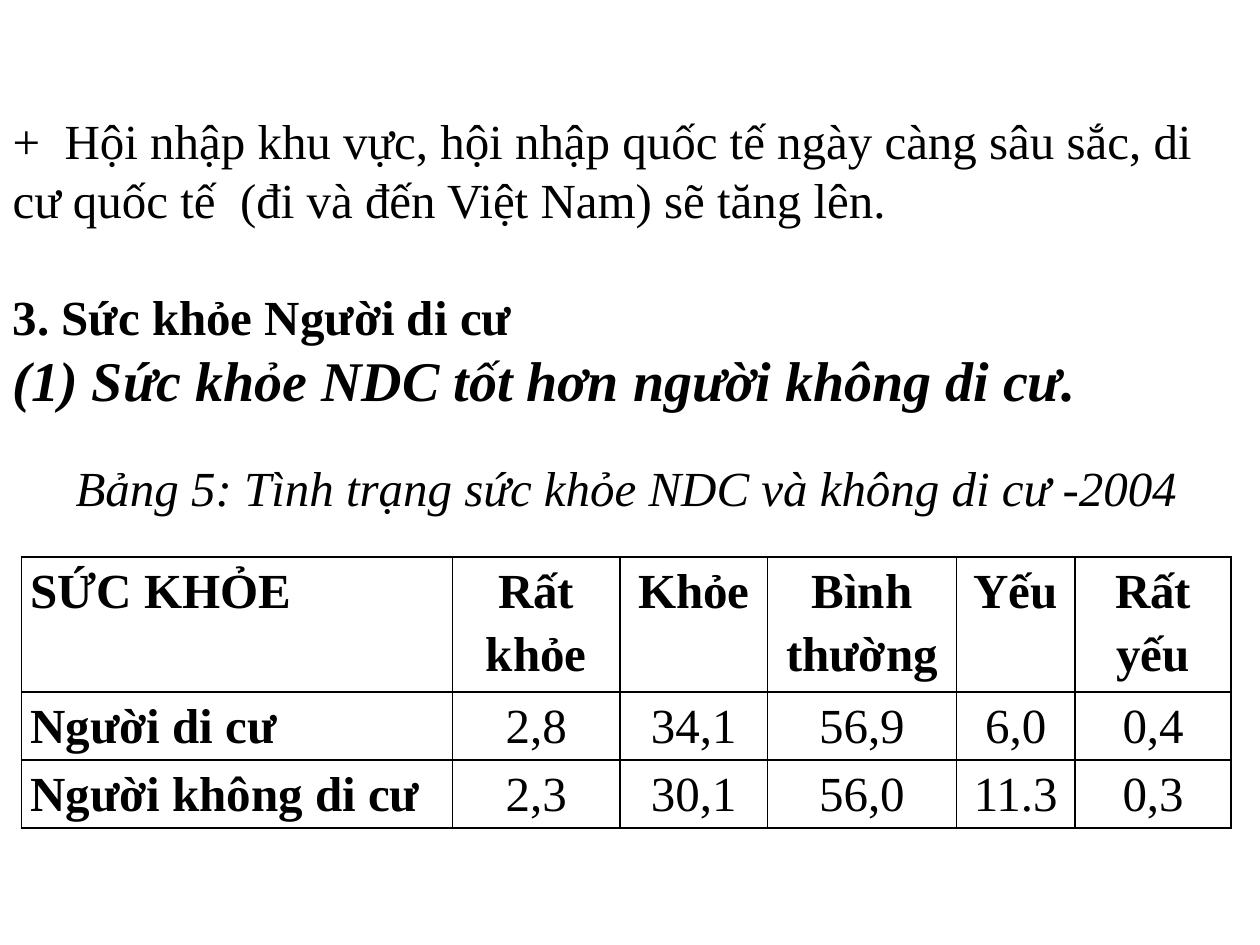
from pptx import Presentation
from pptx.dml.color import RGBColor
from pptx.enum.text import MSO_ANCHOR as Anchor, MSO_AUTO_SIZE as AutoSize, PP_ALIGN as Align
from pptx.oxml import parse_xml
from pptx.oxml.ns import nsdecls
from pptx.util import Cm, Pt

BLACK = "000000"


def color(value):
    return RGBColor.from_string(value)


def write_text(paragraph, text, size=28, bold=False, italic=False, align=Align.LEFT,
               spacing=1.0, before=0, indent=0):
    paragraph.alignment = align
    paragraph.line_spacing = spacing
    paragraph.space_before = Pt(before)
    properties = paragraph._p.get_or_add_pPr()
    properties.set("marL", "0")
    properties.set("indent", str(Cm(indent)))
    properties.append(parse_xml(f"<a:buNone {nsdecls('a')}/>"))
    run = paragraph.add_run()
    run.text = text
    font = run.font
    font.name, font.size, font.bold, font.italic = "Times New Roman", Pt(size), bold, italic
    font.color.rgb = color(BLACK)


presentation = Presentation()
presentation.slide_width, presentation.slide_height = Cm(25.4), Cm(19.05)
slide = presentation.slides.add_slide(presentation.slide_layouts[1])

caption, body = slide.shapes.title, slide.placeholders[1]
for shape, box, anchor in [
    (caption, (0, 9.09, 24.13, 1.45), Anchor.MIDDLE),
    (body, (0, 2.11, 25.4, 7.19), Anchor.TOP),
]:
    shape.left, shape.top, shape.width, shape.height = map(Cm, box)
    shape.text_frame.word_wrap = True
    shape.text_frame.auto_size = AutoSize.NONE
    shape.text_frame.vertical_anchor = anchor

write_text(caption.text_frame.paragraphs[0],
           "Bảng 5: Tình trạng sức khỏe NDC và không di cư -2004", italic=True, indent=1.27)

body_lines = [
    ("+  Hội nhập khu vực, hội nhập quốc tế ngày càng sâu sắc, di cư quốc tế  "
     "(đi và đến Việt Nam) sẽ tăng lên.", {}),
    ("3. Sức khỏe Người di cư", {"bold": True, "before": 33}),
    ("(1) Sức khỏe NDC tốt hơn người không di cư.", {"size": 32, "bold": True, "italic": True}),
]
for index, (text, text_format) in enumerate(body_lines):
    frame = body.text_frame
    paragraph = frame.add_paragraph() if index else frame.paragraphs[0]
    write_text(paragraph, text, **text_format)

rows = [
    ["SỨC KHỎE", "Rất\nkhỏe", "Khỏe", "Bình thường", "Yếu", "Rất yếu"],
    ["Người di cư", "2,8", "34,1", "56,9", "6,0", "0,4"],
    ["Người không di cư", "2,3", "30,1", "56,0", "11.3", "0,3"],
]
column_widths = [8.69, 3.38, 2.97, 3.81, 2.39, 3.15]
row_heights = [2.72, 1.37, 1.37]
table = slide.shapes.add_table(len(rows), len(column_widths), Cm(0.43), Cm(11.23),
                               Cm(sum(column_widths)), Cm(sum(row_heights))).table
for column, width in zip(table.columns, column_widths):
    column.width = Cm(width)
for row, height in zip(table.rows, row_heights):
    row.height = Cm(height)

for row_index, row_texts in enumerate(rows):
    for column_index, cell_text in enumerate(row_texts):
        cell = table.cell(row_index, column_index)
        cell.margin_left = cell.margin_right = Cm(0.18)
        cell.margin_top = cell.margin_bottom = 0
        cell_properties = cell._tc.get_or_add_tcPr()
        for side in "LRTB":
            cell_properties.append(parse_xml(
                f'<a:ln{side} {nsdecls("a")} w="{Pt(1)}"><a:solidFill>'
                f'<a:srgbClr val="{BLACK}"/></a:solidFill></a:ln{side}>'))
        cell.fill.background()
        for index, text in enumerate(cell_text.split("\n")):
            frame = cell.text_frame
            paragraph = frame.add_paragraph() if index else frame.paragraphs[0]
            write_text(paragraph, text, bold=row_index == 0 or column_index == 0, spacing=1.15,
                       align=Align.CENTER if column_index else Align.LEFT)

presentation.save("out.pptx")
